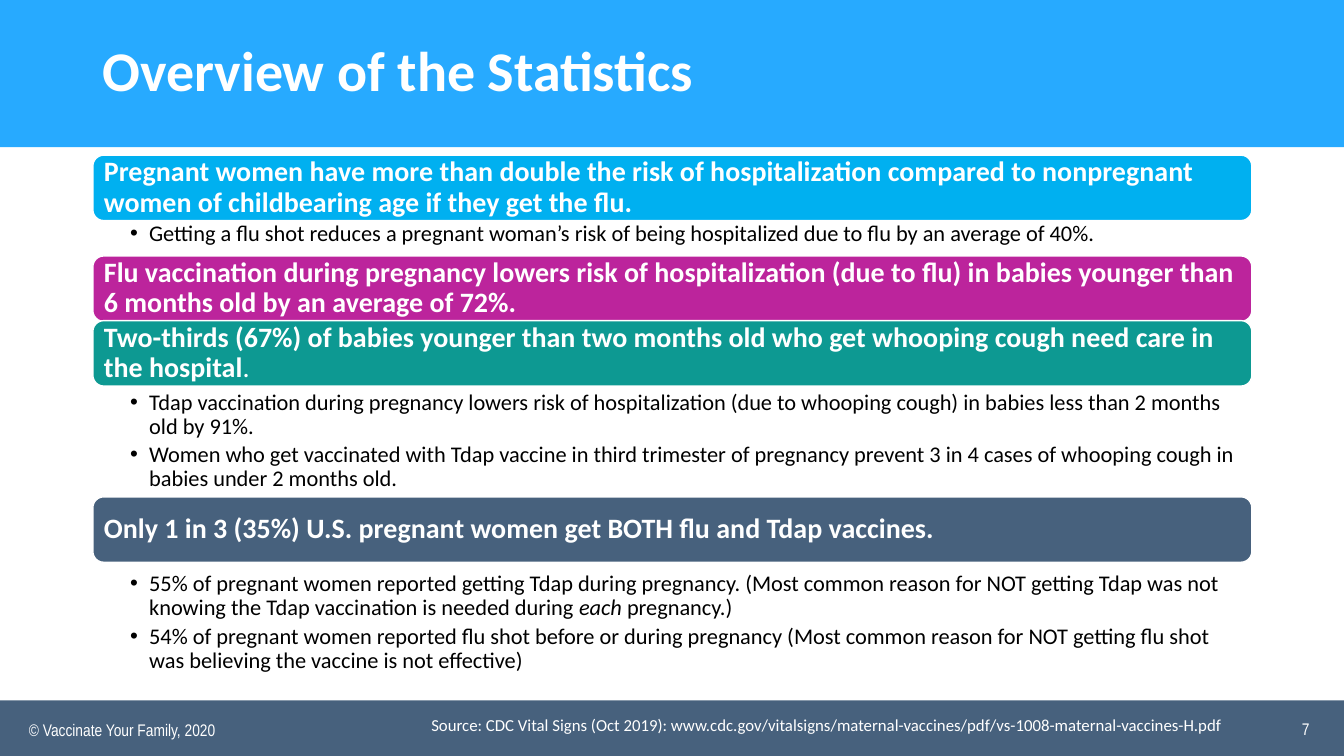
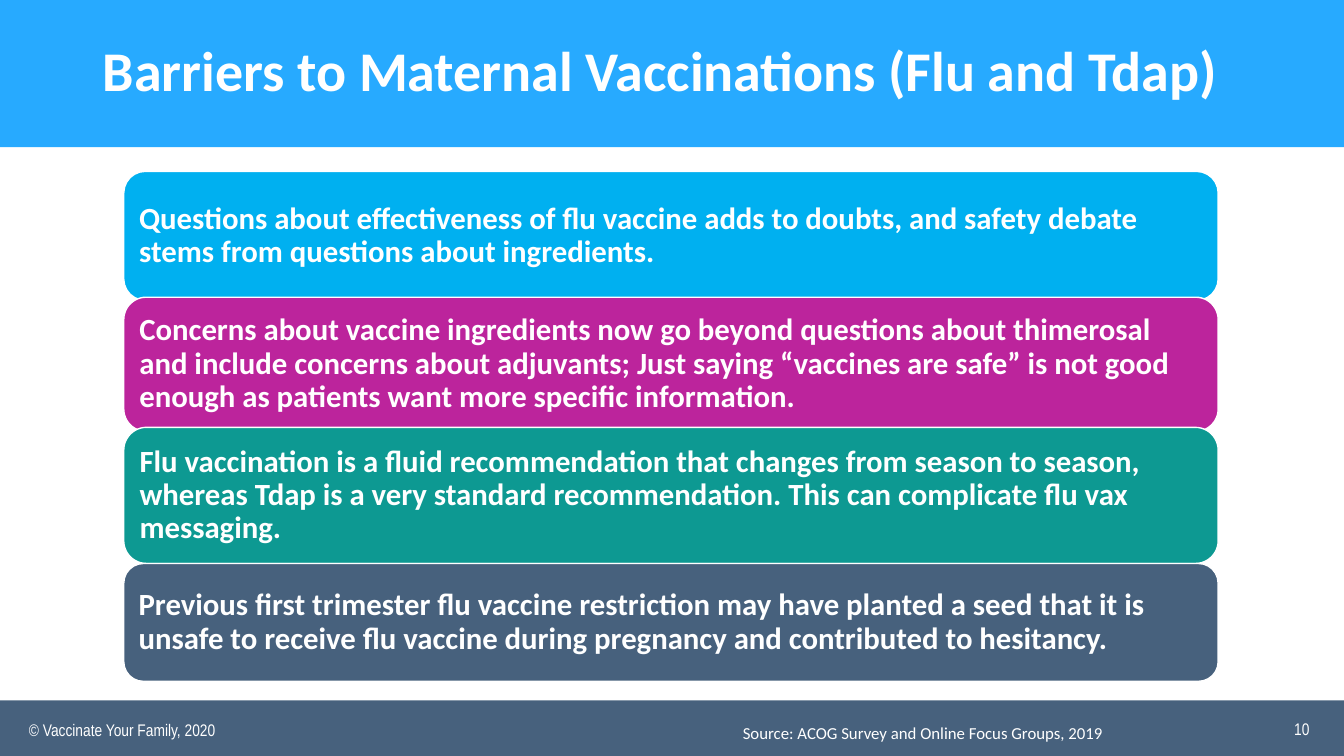
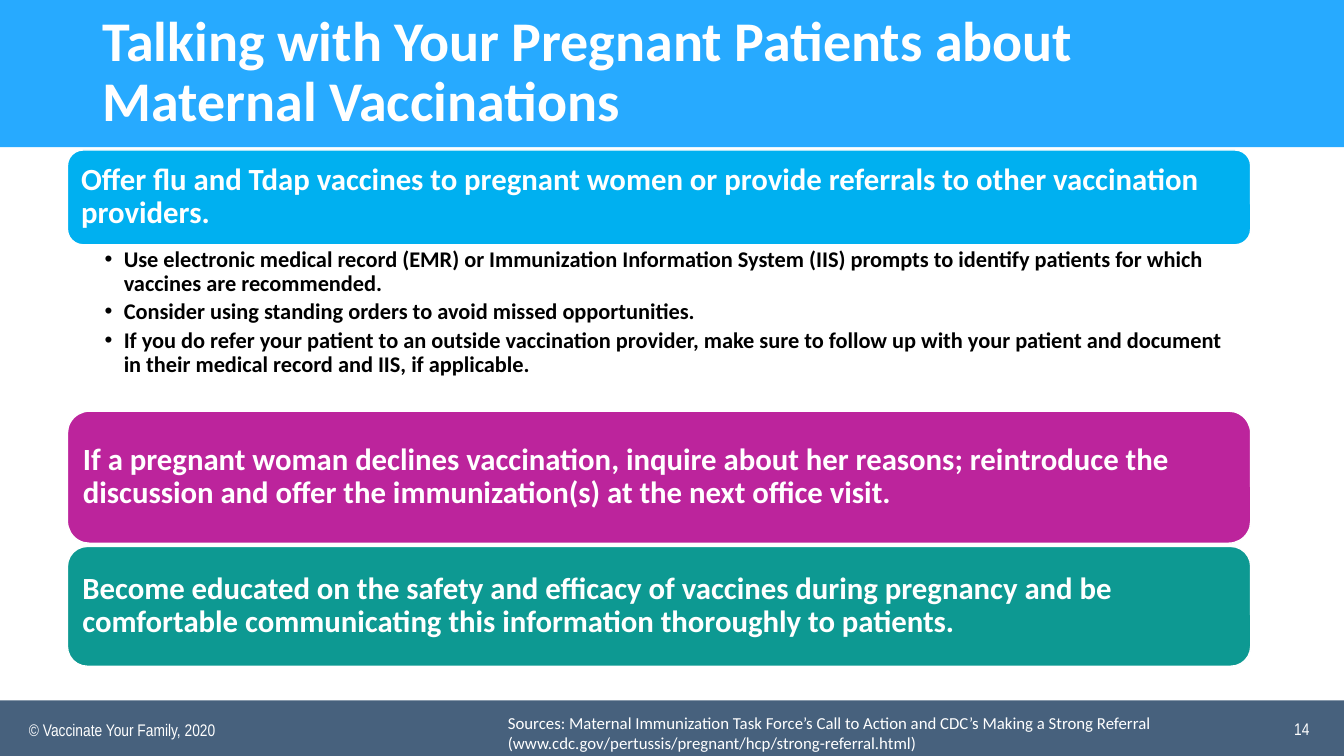
from dataclasses import dataclass, field

from lxml.etree import SubElement as Sub
from pptx import Presentation
from pptx.dml.color import RGBColor as Rgb
from pptx.enum.shapes import MSO_SHAPE as Kind
from pptx.enum.text import MSO_ANCHOR as Anchor, PP_ALIGN as Align
from pptx.oxml.ns import qn
from pptx.util import Cm, Pt


# Theme: colours, fonts and type sizes
@dataclass(frozen=True)
class Theme:
    head: str = "27AAFF"
    sky: str = "00B0F0"
    plum: str = "BC249C"
    teal: str = "0D9992"
    slate: str = "47617D"
    white: str = "FFFFFF"
    black: str = "000000"
    font: str = "Calibri"
    thin: str = "Arial Narrow"
    title: int = 40
    list: int = 16
    foot: int = 12


T = Theme()
WIDE, HIGH = 33.87, 19.05
PAD = (0.25, 0.13, 0.25, 0.13)


# Parts of a page, lengths in centimetres
@dataclass(frozen=True)
class Box:
    left: float
    top: float
    width: float
    height: float


@dataclass(frozen=True)
class Style:
    size: int
    color: str = T.white
    font: str = T.font
    bold: bool = False


@dataclass(frozen=True)
class Run:
    text: str
    bold: bool | None = None
    slant: bool = False


@dataclass(frozen=True)
class Card:
    top: float
    height: float
    fill: str
    runs: list[Run]


@dataclass(frozen=True)
class Notes:
    top: float
    height: float
    lines: list[list[Run]]
    bold: bool = False


@dataclass(frozen=True)
class Page:
    title: str
    number: int
    source: str
    place: Box
    left: float
    width: float
    size: int
    pad: float
    cards: list[Card]
    notes: list[Notes] = field(default_factory=list)


# Drawing
def place(box: Box) -> tuple:
    return Cm(box.left), Cm(box.top), Cm(box.width), Cm(box.height)


def set_frame(frame, pad: tuple, anchor=Anchor.TOP) -> None:
    frame.word_wrap = True
    frame.vertical_anchor = anchor
    (frame.margin_left, frame.margin_top,
     frame.margin_right, frame.margin_bottom) = map(Cm, pad)


def add_runs(para, runs: list[Run], style: Style) -> None:
    for part in runs:
        run = para.add_run()
        run.text = part.text
        font = run.font
        font.name, font.size = style.font, Pt(style.size)
        font.bold = style.bold if part.bold is None else part.bold
        font.italic = part.slant
        font.color.rgb = Rgb.from_string(style.color)


def add_shape(slide, kind, box: Box, fill: str, line: str | None = None):
    shape = slide.shapes.add_shape(kind, *place(box))
    shape.shadow.inherit = False
    shape.fill.solid()
    shape.fill.fore_color.rgb = Rgb.from_string(fill)
    if line:
        shape.line.color.rgb = Rgb.from_string(line)
        shape.line.width = Pt(1)
    else:
        shape.line.fill.background()
    return shape


def add_text(slide, box: Box, text: str, style: Style, anchor=Anchor.TOP,
             align=Align.LEFT, space: float = 1.0) -> None:
    frame = slide.shapes.add_textbox(*place(box)).text_frame
    set_frame(frame, PAD, anchor)
    para = frame.paragraphs[0]
    para.alignment, para.line_spacing = align, space
    add_runs(para, [Run(text)], style)


def add_card(slide, page: Page, card: Card) -> None:
    box = Box(page.left, card.top, page.width, card.height)
    shape = add_shape(slide, Kind.ROUNDED_RECTANGLE, box, card.fill, T.white)
    frame = shape.text_frame
    set_frame(frame, (page.pad,) * 4, Anchor.MIDDLE)
    para = frame.paragraphs[0]
    para.alignment, para.line_spacing = Align.LEFT, 0.9
    add_runs(para, card.runs, Style(page.size, bold=True))


def add_notes(slide, page: Page, notes: Notes) -> None:
    box = Box(page.left, notes.top, page.width, notes.height)
    frame = slide.shapes.add_textbox(*place(box)).text_frame
    set_frame(frame, (0.94, 0.05, 0.3, 0.05))
    for i, runs in enumerate(notes.lines):
        para = frame.add_paragraph() if i else frame.paragraphs[0]
        para.line_spacing, para.space_after = 0.9, Pt(3)
        props = para._p.get_or_add_pPr()
        props.set("marL", str(Cm(0.48)))
        props.set("indent", str(-Cm(0.48)))
        Sub(props, qn("a:buFont"), typeface="Arial")
        Sub(props, qn("a:buChar"), char="•")
        add_runs(para, runs, Style(T.list, T.black, bold=notes.bold))


def add_page(deck, page: Page) -> None:
    slide = deck.slides.add_slide(deck.slide_layouts[6])
    thin = Style(T.foot, font=T.thin)
    # Bands, title and footer
    add_shape(slide, Kind.RECTANGLE, Box(0, 17.65, WIDE, HIGH - 17.65), T.slate)
    add_shape(slide, Kind.RECTANGLE, Box(0, 0, WIDE, 3.71), T.head)
    add_text(slide, Box(0.48, 18, 10.5, 0.76),
             "© Vaccinate Your Family, 2020", thin)
    add_text(slide, Box(2.34, 0.48, 29.21, 2.74), page.title,
             Style(T.title, bold=True), Anchor.MIDDLE, space=0.9)
    add_text(slide, page.place, page.source, Style(T.foot))
    add_text(slide, Box(25.63, 17.86, 7.62, 1.02), str(page.number), thin,
             Anchor.MIDDLE, Align.RIGHT)
    # Body
    for card in page.cards:
        add_card(slide, page, card)
    for notes in page.notes:
        add_notes(slide, page, notes)


# Content
STATS = Page(
    "Overview of the Statistics", 7,
    "Source: CDC Vital Signs (Oct 2019): "
    "www.cdc.gov/vitalsigns/maternal-vaccines/pdf/vs-1008-maternal-vaccines-H.pdf",
    Box(10.62, 17.88, 21.18, 0.76), left=2.34, width=29.21, size=20, pad=0.2,
    cards=[
        Card(3.91, 1.65, T.sky, [Run(
            "Pregnant women have more than double the risk of hospitalization "
            "compared to nonpregnant women of childbearing age if they get the flu.")]),
        Card(6.45, 1.65, T.plum, [Run(
            "Flu vaccination during pregnancy lowers risk of hospitalization "
            "(due to flu) in babies younger than 6 months old by an average of 72%.")]),
        Card(8.08, 1.65, T.teal, [Run(
            "Two-thirds (67%) of babies younger than two months old who get "
            "whooping cough need care in the hospital"), Run(".", bold=False)]),
        Card(12.52, 1.65, T.slate, [Run(
            "Only 1 in 3 (35%) U.S. pregnant women get BOTH flu and Tdap vaccines.")]),
    ],
    notes=[
        Notes(5.56, 0.75, [[Run(
            "Getting a flu shot reduces a pregnant woman’s risk of being "
            "hospitalized due to flu by an average of 40%.")]]),
        Notes(9.8, 2.5, [
            [Run("Tdap vaccination during pregnancy lowers risk of hospitalization "
                 "(due to whooping cough) in babies less than 2 months old by 91%.")],
            [Run("Women who get vaccinated with Tdap vaccine in third trimester of "
                 "pregnancy prevent 3 in 4 cases of whooping cough in babies under "
                 "2 months old.")]]),
        Notes(14.37, 2.8, [
            [Run("55% of pregnant women reported getting Tdap during pregnancy. "
                 "(Most common reason for NOT getting Tdap was not knowing the Tdap "
                 "vaccination is needed during "),
             Run("each ", slant=True), Run("pregnancy.)")],
            [Run("54% of pregnant women reported flu shot before or during pregnancy "
                 "(Most common reason for NOT getting flu shot was believing the "
                 "vaccine is not effective)")]]),
    ])

DOUBTS = Page(
    "Barriers to Maternal Vaccinations (Flu and Tdap)", 10,
    "Source: ACOG Survey and Online Focus Groups, 2019",
    Box(18.47, 18.08, 13.06, 0.76), left=3.12, width=27.58, size=22, pad=0.23,
    cards=[
        Card(4.32, 3.25, T.sky, [Run(
            "Questions about effectiveness of flu vaccine adds to doubts, and "
            "safety debate stems from questions about ingredients.")]),
        Card(7.49, 3.38, T.plum, [Run(
            "Concerns about vaccine ingredients now go beyond questions about "
            "thimerosal and include concerns about adjuvants; Just saying “vaccines "
            "are safe” is not good enough as patients want more specific "
            "information.")]),
        Card(10.77, 3.43, T.teal, [Run(
            "Flu vaccination is a fluid recommendation that changes from season to "
            "season, whereas Tdap is a very standard recommendation. This can "
            "complicate flu vax messaging.")]),
        Card(14.2, 2.97, T.slate, [Run(
            "Previous first trimester flu vaccine restriction may have planted a "
            "seed that it is unsafe to receive flu vaccine during pregnancy and "
            "contributed to hesitancy.")]),
    ])

TALKS = Page(
    "Talking with Your Pregnant Patients about Maternal Vaccinations", 14,
    "Sources: Maternal Immunization Task Force’s Call to Action and CDC’s Making "
    "a Strong Referral (www.cdc.gov/pertussis/pregnant/hcp/strong-referral.html)",
    Box(12.55, 17.83, 17.88, 1.27), left=1.7, width=29.82, size=22, pad=0.23,
    cards=[
        Card(3.78, 2.39, T.sky, [Run(
            "Offer flu and Tdap vaccines to pregnant women or provide referrals to "
            "other vaccination providers.")]),
        Card(10.36, 3.33, T.plum, [Run(
            "If a pregnant woman declines vaccination, inquire about her reasons; "
            "reintroduce the discussion and offer the immunization(s) at the next "
            "office visit.")]),
        Card(13.77, 3.02, T.teal, [Run(
            "Become educated on the safety and efficacy of vaccines during pregnancy "
            "and be comfortable communicating this information thoroughly to "
            "patients.")]),
    ],
    notes=[
        Notes(6.2, 3.94, [
            [Run("Use electronic medical record (EMR) or Immunization Information "
                 "System (IIS) prompts to identify patients for which vaccines are "
                 "recommended.")],
            [Run("Consider using standing orders to avoid missed opportunities.")],
            [Run("If you do refer your patient to an outside vaccination provider, "
                 "make sure to follow up with your patient and document in their "
                 "medical record and IIS, if applicable.")]], bold=True),
    ])


def main() -> None:
    deck = Presentation()
    deck.slide_width, deck.slide_height = Cm(WIDE), Cm(HIGH)
    for page in (STATS, DOUBTS, TALKS):
        add_page(deck, page)
    deck.save("out.pptx")


if __name__ == "__main__":
    main()
